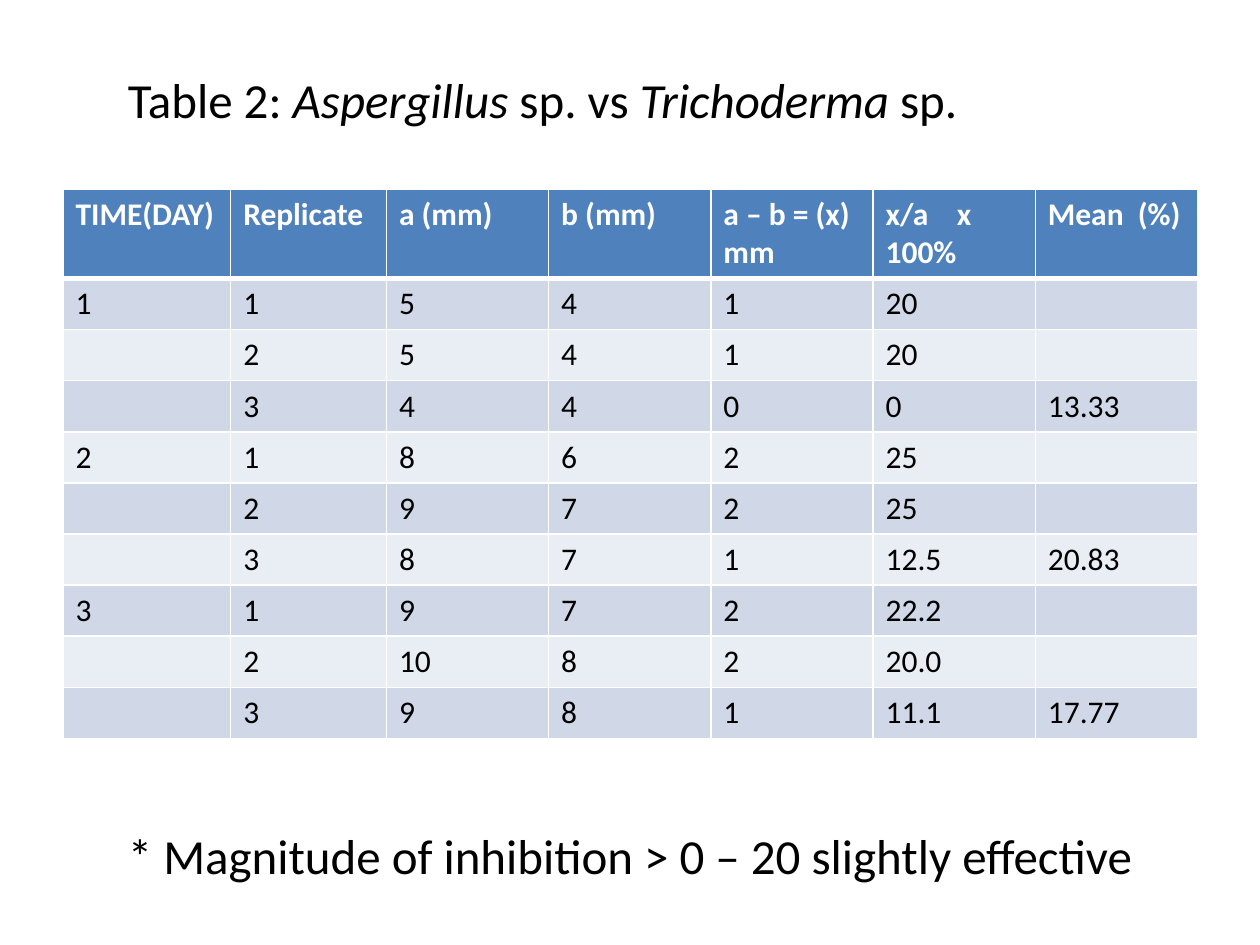
from dataclasses import dataclass

from lxml import etree
from pptx import Presentation
from pptx.dml.color import RGBColor
from pptx.enum.text import MSO_AUTO_SIZE
from pptx.oxml.ns import qn
from pptx.util import Cm, Pt

FIT_SHAPE = MSO_AUTO_SIZE.SHAPE_TO_FIT_TEXT
BLANK_LAYOUT = 6


@dataclass(frozen=True)
class Theme:
    font: str = "Calibri"
    caption_size: int = 28
    table_size: int = 18
    text: str = "000000"
    header_text: str = "FFFFFF"
    header_fill: str = "4F81BD"
    bands: tuple = ("D0D8E8", "E9EDF4")
    border: str = "FFFFFF"
    thin: int = 1
    thick: int = 3


THEME = Theme()

HEADINGS = ("TIME(DAY)", "Replicate", "a (mm)", "b (mm)",
            "a – b = (x) mm", "x/a    x 100%", "Mean  (%)")
COLUMN_WIDTHS = (3.38, 3.14) + (3.27,) * 5
ROW_HEIGHT = 1.03

# Per day: replicates as (a, b, a – b, inhibition %), then their mean
DAYS = (
    ((("5", "4", "1", "20"), ("5", "4", "1", "20"), ("4", "4", "0", "0")), "13.33"),
    ((("8", "6", "2", "25"), ("9", "7", "2", "25"), ("8", "7", "1", "12.5")), "20.83"),
    ((("9", "7", "2", "22.2"), ("10", "8", "2", "20.0"), ("9", "8", "1", "11.1")), "17.77"),
)


def inhibition_rows():
    """Show the day on its first replicate and the mean on its last."""
    rows = []
    for day, (replicates, mean) in enumerate(DAYS, start=1):
        for number, measures in enumerate(replicates, start=1):
            day_label = str(day) if number == 1 else ""
            mean_label = mean if number == len(replicates) else ""
            rows.append((day_label, str(number), *measures, mean_label))
    return rows


def style_font(font, size, color, bold=False, italic=False):
    font.name = THEME.font
    font.size = Pt(size)
    font.color.rgb = RGBColor.from_string(color)
    font.bold = bold
    font.italic = italic


def set_borders(cell, top, bottom):
    """Draw the four cell edges; top and bottom are widths in points."""
    properties = cell._tc.get_or_add_tcPr()
    widths = {"a:lnL": THEME.thin, "a:lnR": THEME.thin, "a:lnT": top, "a:lnB": bottom}
    for edge, width in widths.items():
        line = etree.SubElement(properties, qn(edge), w=str(Pt(width)))
        fill = etree.SubElement(line, qn("a:solidFill"))
        etree.SubElement(fill, qn("a:srgbClr"), val=THEME.border)


def fill_cell(cell, text, row_index):
    is_header = row_index == 0
    set_borders(cell,
                top=THEME.thick if row_index == 1 else THEME.thin,
                bottom=THEME.thick if is_header else THEME.thin)
    cell.fill.solid()
    fill = THEME.header_fill if is_header else THEME.bands[(row_index - 1) % 2]
    cell.fill.fore_color.rgb = RGBColor.from_string(fill)
    cell.text_frame.text = text
    paragraph = cell.text_frame.paragraphs[0]
    color = THEME.header_text if is_header else THEME.text
    for styled in (paragraph, *paragraph.runs):
        style_font(styled.font, THEME.table_size, color, bold=is_header)


def add_inhibition_table(slide, left, top):
    rows = [HEADINGS, *inhibition_rows()]
    table = slide.shapes.add_table(
        len(rows), len(HEADINGS), Cm(left), Cm(top),
        Cm(sum(COLUMN_WIDTHS)), Cm(ROW_HEIGHT * len(rows))).table
    for column, width in zip(table.columns, COLUMN_WIDTHS):
        column.width = Cm(width)
    for row_index, values in enumerate(rows):
        table.rows[row_index].height = Cm(ROW_HEIGHT)
        for column_index, value in enumerate(values):
            fill_cell(table.cell(row_index, column_index), value, row_index)


def add_caption(slide, left, top, width, parts, wrap):
    """Add one line of text from (text, italic) parts."""
    frame = slide.shapes.add_textbox(Cm(left), Cm(top), Cm(width), Cm(1.45)).text_frame
    frame.word_wrap = wrap
    frame.auto_size = FIT_SHAPE
    for text, italic in parts:
        run = frame.paragraphs[0].add_run()
        run.text = text
        style_font(run.font, THEME.caption_size, THEME.text, italic=italic)


def main():
    presentation = Presentation()
    presentation.slide_width = Cm(25.4)
    presentation.slide_height = Cm(19.05)
    slide = presentation.slides.add_slide(presentation.slide_layouts[BLANK_LAYOUT])

    add_inhibition_table(slide, 1.27, 3.81)
    title = (("Table 2: ", False), ("Aspergillus", True), (" sp. vs ", False),
             ("Trichoderma", True), (" sp.", False))
    add_caption(slide, 2.33, 1.27, 19.69, title, wrap=True)
    footnote = (("* Magnitude of inhibition > 0 – 20 slightly effective", False),)
    add_caption(slide, 2.33, 16.51, 21, footnote, wrap=False)

    presentation.save("out.pptx")


if __name__ == "__main__":
    main()
